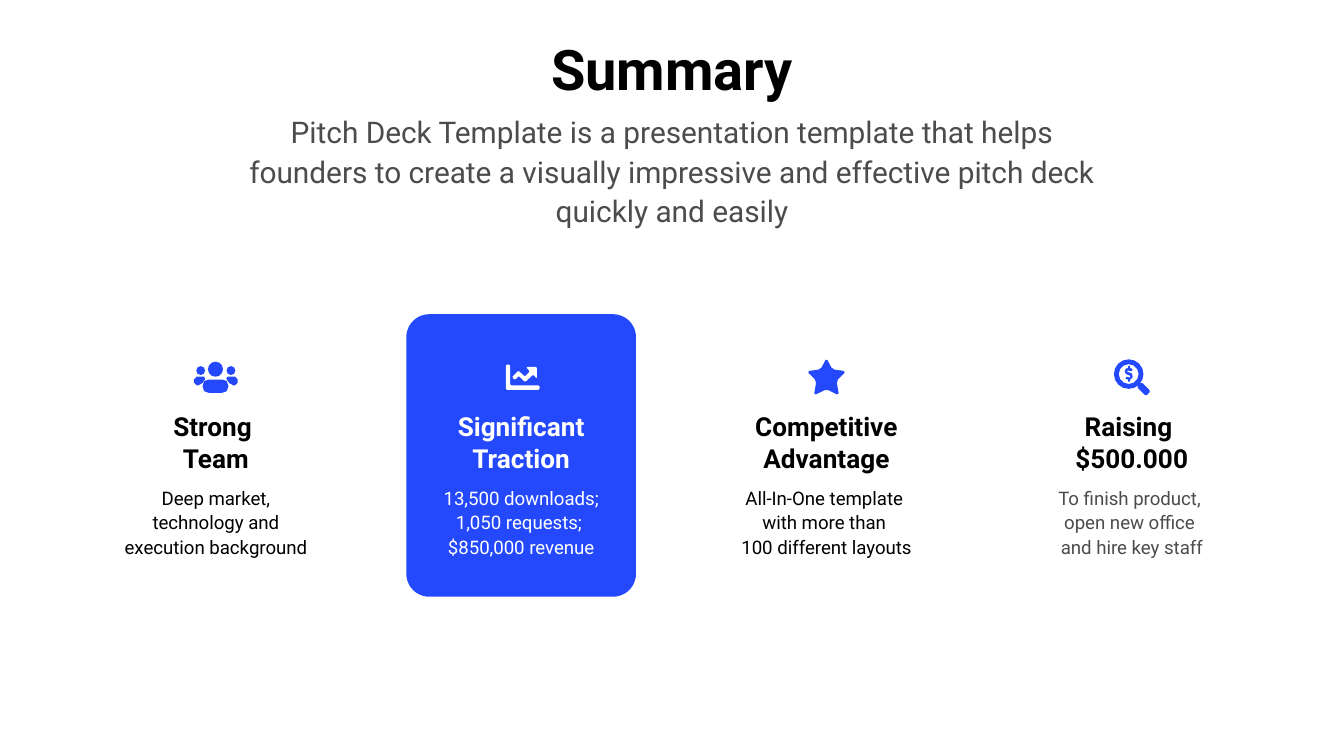
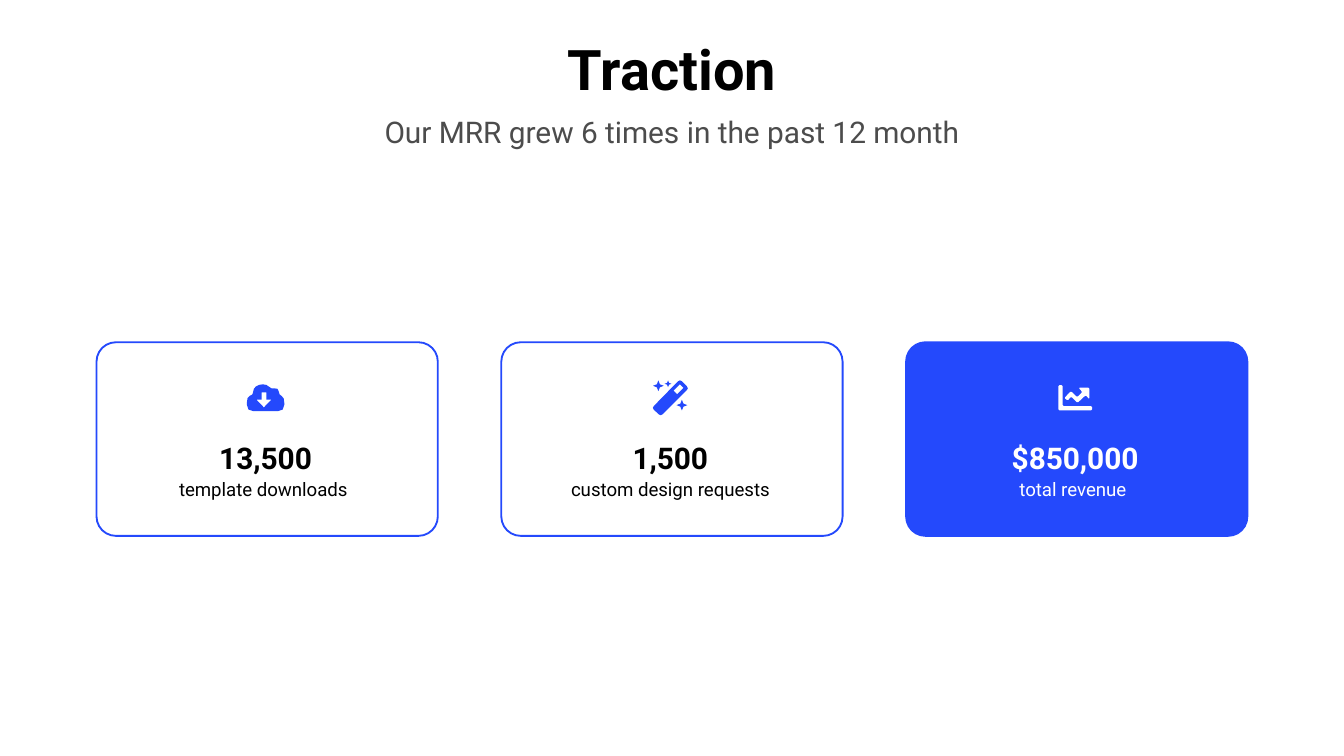
"""Build a two-slide pitch deck with a summary and traction figures."""
from dataclasses import dataclass
from math import cos, hypot, pi, sin
from typing import NamedTuple

from lxml import etree
from pptx import Presentation
from pptx import util as u
from pptx.dml.color import RGBColor
from pptx.enum import shapes, text
from pptx.oxml import ns

Points = list[tuple[float, float]]


@dataclass(frozen=True)
class Theme:
    font: str = "Roboto"
    blue: RGBColor = RGBColor(0x24, 0x49, 0xFC)
    black: RGBColor = RGBColor(0, 0, 0)
    grey: RGBColor = RGBColor(0x4C, 0x4C, 0x4C)
    white: RGBColor = RGBColor(255, 255, 255)
    title: int = 30
    lead: int = 16
    figure: int = 16
    heading: int = 14
    detail: int = 10


THEME = Theme()
PAGE_WIDTH, PAGE_HEIGHT = 25.4, 14.29
ICON_UNIT = u.Cm(2.54) / 100


@dataclass(frozen=True)
class Style:
    size: int
    color: RGBColor
    bold: bool = False
    spacing: float = 1.0


class Box(NamedTuple):
    """A box in centimetres, placed by its horizontal centre."""
    center: float
    top: float
    width: float
    height: float

    def lengths(self) -> tuple[u.Cm, ...]:
        left = self.center - self.width / 2
        return tuple(u.Cm(n) for n in (left, self.top, self.width, self.height))


class Benefit(NamedTuple):
    icon: str
    heading: list[str]
    detail: list[str]
    color: RGBColor = THEME.black
    width: float = 4.95
    filled: bool = False
    icon_shift: float = 0.0


class Metric(NamedTuple):
    icon: str
    figure: str
    label: str
    filled: bool = False


def circle(x: float, y: float, radius: float, count: int) -> Points:
    """Return points around a circle."""
    angles = [2 * pi * step / count for step in range(count)]
    return [(x + radius * cos(a), y + radius * sin(a)) for a in angles]


def rounded(corners: Points, radius: float, steps: int = 1) -> Points:
    """Return the polygon with each corner replaced by a small curve."""
    outline: Points = []
    for index, (x, y) in enumerate(corners):
        ends = []
        for nx, ny in (corners[index - 1], corners[(index + 1) % len(corners)]):
            length = hypot(nx - x, ny - y)
            cut = min(radius / length, 0.5)
            ends.append((x + (nx - x) * cut, y + (ny - y) * cut))
        (ax, ay), (bx, by) = ends
        for step in range(steps + 1):
            t = step / steps
            start, middle, end = (1 - t) ** 2, 2 * t * (1 - t), t * t
            outline.append((start * ax + middle * x + end * bx,
                            start * ay + middle * y + end * by))
    return outline


def sparkle(x: float, y: float, radius: float) -> Points:
    """Return a four-pointed star."""
    reach = [radius if step % 2 == 0 else radius * 0.4 for step in range(8)]
    return [(x + r * cos(step * pi / 4), y + r * sin(step * pi / 4))
            for step, r in enumerate(reach)]


ICONS: dict[str, list[Points]] = {
    "team": [
        circle(5, 6.5, 3.3, 8), circle(27.5, 6.5, 3.3, 8), circle(16, 5.5, 5.6, 12),
        rounded([(6.5, 23), (6.5, 13.2), (25.5, 13.2), (25.5, 23)], 4.5, 2),
        rounded([(0, 17.5), (0, 11), (9.5, 11), (5.2, 17.5)], 2),
        rounded([(32.5, 17.5), (32.5, 11), (23, 11), (27.3, 17.5)], 2),
    ],
    "chart": [
        rounded([(0, 0), (3.2, 0), (3.2, 15.6), (25, 15.6), (25, 18.8), (0, 18.8)], 0.8),
        rounded([(4.5, 9.5), (9.3, 4.5), (14, 9), (17.8, 5.2), (15, 1.8), (23, 1.8),
                 (23, 10.5), (20.3, 7.5), (14.2, 13.2), (9.5, 8.5), (6.8, 11.5)], 0.8),
    ],
    "star": [
        rounded([(14, -0.5), (18.3, 7.8), (28.5, 9.3), (21.5, 16.5), (23.3, 27.2),
                 (14, 22.7), (4.7, 27.2), (6.5, 16.5), (-0.5, 9.3), (9.7, 7.8)], 1.5),
    ],
    "search": [
        circle(11, 11, 11, 16), circle(11, 11, 7.4, 12),
        rounded([(17, 20.5), (20.5, 17), (27.3, 23.8), (23.8, 27.3)], 1),
        [(10.6, 5), (12, 5), (12, 6.5), (14, 7.3), (13.3, 8.8), (10.2, 8.3),
         (9.8, 9.2), (13.2, 10.5), (14, 12.5), (13.6, 14), (12, 15.2), (12, 16.6),
         (10.6, 16.6), (10.6, 15.2), (8.6, 14.3), (9.4, 13), (12, 13.6),
         (12.3, 12.3), (9, 11), (8, 9), (8.8, 7), (10.6, 6.5)],
    ],
    "cloud": [
        rounded([(0, 20), (0, 9), (4.8, 8), (4.8, 3), (9, 0), (15, 0), (18, 3.5),
                 (23.5, 2.5), (24, 8), (28, 9.5), (28, 20)], 5, 2),
        [(11, 6), (14.5, 6), (14.5, 11.3), (18.4, 11.3), (12.75, 17.2),
         (7.1, 11.3), (11, 11.3)],
    ],
    "wand": [
        sparkle(4, 4, 4), sparkle(11.2, 2.5, 2.5), sparkle(21.5, 18.4, 4),
        rounded([(-0.8, 20.5), (20, -0.8), (26.6, 5.8), (5.8, 26.6)], 2, 2),
        [(15.2, 7.6), (20, 2.9), (22.7, 5.6), (18, 10.3)],
    ],
}


def write(frame, lines: list[str], style: Style) -> None:
    """Fill a text frame with centred paragraphs."""
    frame.word_wrap = True
    frame.auto_size = text.MSO_AUTO_SIZE.NONE
    for index, line in enumerate(lines):
        para = frame.paragraphs[0] if index == 0 else frame.add_paragraph()
        para.alignment = text.PP_ALIGN.CENTER
        para.line_spacing = style.spacing
        para.space_before = u.Pt(0)
        span = para.add_run()
        span.text = line
        span.font.name = THEME.font
        span.font.size = u.Pt(style.size)
        span.font.bold = style.bold
        span.font.color.rgb = style.color


def add_label(page, place: Box, lines: list[str], style: Style) -> None:
    """Add a text box."""
    write(page.shapes.add_textbox(*place.lengths()).text_frame, lines, style)


def add_card(page, place: Box, filled: bool, outlined: bool) -> None:
    """Add a rounded card, filled or only outlined."""
    card = page.shapes.add_shape(shapes.MSO_SHAPE.ROUNDED_RECTANGLE, *place.lengths())
    card.adjustments[0] = 0.1
    card.shadow.inherit = False
    if filled:
        card.fill.solid()
        card.fill.fore_color.rgb = THEME.blue
    else:
        card.fill.background()
    if outlined:
        card.line.color.rgb = THEME.blue
        card.line.width = u.Pt(1)
    else:
        card.line.fill.background()


def add_icon(page, name: str, center: float, middle: float, color: RGBColor) -> None:
    """Draw an icon centred on a point."""
    outlines = [[(x * ICON_UNIT, y * ICON_UNIT) for x, y in outline]
                for outline in ICONS[name]]
    xs, ys = zip(*(point for outline in outlines for point in outline))
    builder = page.shapes.build_freeform(*outlines[0][0])
    for index, outline in enumerate(outlines):
        if index:
            builder.move_to(*outline[0])
        builder.add_line_segments(outline[1:], close=True)
    icon = builder.convert_to_shape(
        round(u.Cm(center) - (min(xs) + max(xs)) / 2),
        round(u.Cm(middle) - (min(ys) + max(ys)) / 2))
    icon.shadow.inherit = False
    icon.fill.solid()
    icon.fill.fore_color.rgb = color
    icon.line.fill.background()


def add_page(deck, title: str, lead: str, lead_width: float):
    """Add a slide with its title and lead sentence."""
    page = deck.slides.add_slide(deck.slide_layouts[1])
    heading, body = page.shapes.title, page.placeholders[1]
    middle = PAGE_WIDTH / 2
    for holder, place in ((heading, Box(middle, 0.41, 22.68, 1.75)),
                          (body, Box(middle, 1.96, lead_width, 1.5))):
        holder.left, holder.top, holder.width, holder.height = place.lengths()
    write(heading.text_frame, [title], Style(THEME.title, THEME.black, True))
    heading.text_frame.vertical_anchor = text.MSO_ANCHOR.MIDDLE
    write(body.text_frame, [lead], Style(THEME.lead, THEME.grey, spacing=1.1))
    body.text_frame.vertical_anchor = text.MSO_ANCHOR.TOP
    for para in body.text_frame.paragraphs:
        props = para._p.get_or_add_pPr()
        props.set("marL", "0")
        props.set("indent", "0")
        etree.SubElement(props, ns.qn("a:buNone"))
    return page


def add_summary(deck) -> None:
    """Add the summary slide."""
    page = add_page(
        deck, "Summary",
        "Pitch Deck Template is a presentation template that helps founders to create "
        "a visually impressive and effective pitch deck quickly and easily", 17.15)
    benefits = [
        Benefit("team", ["Strong ", "Team"],
                ["Deep market, technology and execution background"], width=4.09),
        Benefit("chart", ["Significant Traction"],
                ["13,500 downloads;", "1,050 requests; ", "$850,000 revenue"],
                THEME.white, filled=True, icon_shift=0.03),
        Benefit("star", ["Competitive Advantage"],
                ["All-In-One template ", "with more than ", "100 different layouts"]),
        Benefit("search", ["Raising ", "$500.000"],
                ["To finish product, ", "open new office ", "and hire key staff"],
                THEME.grey),
    ]
    for index, benefit in enumerate(benefits):
        center = 4.08 + 5.77 * index
        if benefit.filled:
            add_card(page, Box(center, 5.94, 4.34, 5.34), True, False)
        strong = THEME.white if benefit.filled else THEME.black
        add_label(page, Box(center, 7.64, 4.37, 1.45), benefit.heading,
                  Style(THEME.heading, strong, True))
        add_label(page, Box(center, 9.03, benefit.width, 1.65), benefit.detail,
                  Style(THEME.detail, benefit.color, spacing=1.1))
        add_icon(page, benefit.icon, center + benefit.icon_shift, 7.13,
                 THEME.white if benefit.filled else THEME.blue)


def add_traction(deck) -> None:
    """Add the traction slide."""
    page = add_page(deck, "Traction", "Our MRR grew 6 times in the past 12 month", 22.68)
    metrics = [
        Metric("cloud", "13,500", "template downloads "),
        Metric("wand", "1,500", "custom design requests"),
        Metric("chart", "$850,000", "total revenue ", True),
    ]
    for index, metric in enumerate(metrics):
        center = 5.05 + 7.65 * index
        inner = center - 0.03
        color = THEME.white if metric.filled else THEME.black
        add_card(page, Box(center, 6.47, 6.45, 3.66), metric.filled, True)
        add_label(page, Box(inner, 8.05, 5.54, 1.02), [metric.figure],
                  Style(THEME.figure, color, True, 1.2))
        add_label(page, Box(inner, 8.86, 5.54, 0.71), [metric.label],
                  Style(THEME.detail, color, spacing=1.1))
        add_icon(page, metric.icon, inner, 7.52,
                 THEME.white if metric.filled else THEME.blue)


def main() -> None:
    """Create and save the deck."""
    deck = Presentation()
    deck.slide_width, deck.slide_height = u.Cm(PAGE_WIDTH), u.Cm(PAGE_HEIGHT)
    add_summary(deck)
    add_traction(deck)
    deck.save("out.pptx")


if __name__ == "__main__":
    main()
